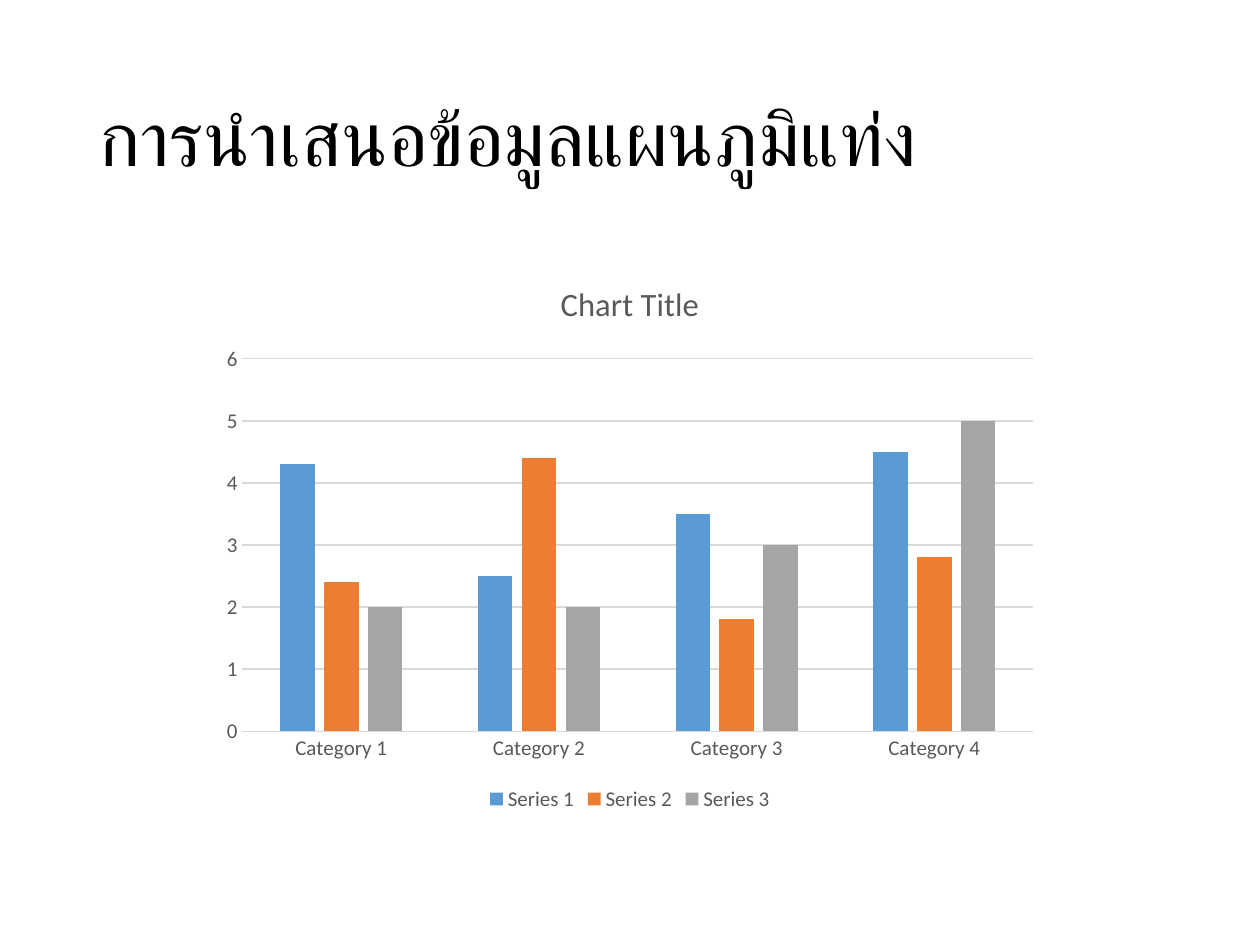
from pptx import Presentation
from pptx.chart.data import CategoryChartData as Data
from pptx.dml.color import RGBColor
from pptx.enum.chart import XL_CHART_TYPE as Kind, XL_LEGEND_POSITION as Place, XL_TICK_MARK as Tick
from pptx.enum.text import MSO_ANCHOR as Anchor
from pptx.util import Inches, Pt

BLACK = RGBColor(0x00, 0x00, 0x00)
GREY = RGBColor(0x59, 0x59, 0x59)
PALE = RGBColor(0xD9, 0xD9, 0xD9)
BLUE = RGBColor(0x5B, 0x9B, 0xD5)
ORANGE = RGBColor(0xED, 0x7D, 0x31)
SILVER = RGBColor(0xA5, 0xA5, 0xA5)
FACE = "Calibri"


def style(font, size, color):
    font.name, font.size, font.bold = FACE, Pt(size), False
    font.color.rgb = color


def rule(line):
    """Give an axis or a gridline its thin pale stroke."""
    line.color.rgb = PALE
    line.width = Pt(0.75)


deck = Presentation()
deck.slide_width, deck.slide_height = Inches(10), Inches(7.5)
wide, high = deck.slide_width, deck.slide_height
slide = deck.slides.add_slide(deck.slide_layouts[6])

# Heading
left = Inches(0.69)
box = slide.shapes.add_textbox(left, Inches(0.4), wide - 2 * left, Inches(1.45))
frame = box.text_frame
frame.word_wrap = True
frame.vertical_anchor = Anchor.MIDDLE
para = frame.paragraphs[0]
para.line_spacing = 0.9
run = para.add_run()
run.text = "การนำเสนอข้อมูลแผนภูมิแท่ง"
style(run.font, 44, BLACK)

# Column chart, two thirds of the slide wide and centred
rows = [
    ("Series 1", (4.3, 2.5, 3.5, 4.5), BLUE),
    ("Series 2", (2.4, 4.4, 1.8, 2.8), ORANGE),
    ("Series 3", (2, 2, 3, 5), SILVER),
]
data = Data()
data.categories = [f"Category {n}" for n in range(1, 5)]
for name, vals, color in rows:
    data.add_series(name, vals)

chart = slide.shapes.add_chart(
    Kind.COLUMN_CLUSTERED, wide // 6, Inches(2.04), wide * 2 // 3, Inches(4.44), data
).chart
style(chart.font, 10, BLACK)

chart.has_title = True
run = chart.chart_title.text_frame.paragraphs[0].add_run()
run.text = "Chart Title"
style(run.font, 18.6, GREY)
chart.chart_title.include_in_layout = False

plot = chart.plots[0]
plot.gap_width, plot.overlap = 219, -27
plot.vary_by_categories = False
for bars, (name, vals, color) in zip(plot.series, rows):
    bars.format.fill.solid()
    bars.format.fill.fore_color.rgb = color
    bars.invert_if_negative = False

for axis in (chart.category_axis, chart.value_axis):
    axis.major_tick_mark = axis.minor_tick_mark = Tick.NONE
    style(axis.tick_labels.font, 12, GREY)
rule(chart.category_axis.format.line)
scale = chart.value_axis
scale.format.line.fill.background()
scale.minimum_scale, scale.maximum_scale, scale.major_unit = 0, 6, 1
scale.has_major_gridlines = True
rule(scale.major_gridlines.format.line)

chart.has_legend = True
chart.legend.position = Place.BOTTOM
chart.legend.include_in_layout = False
style(chart.legend.font, 12, GREY)

deck.save("out.pptx")
